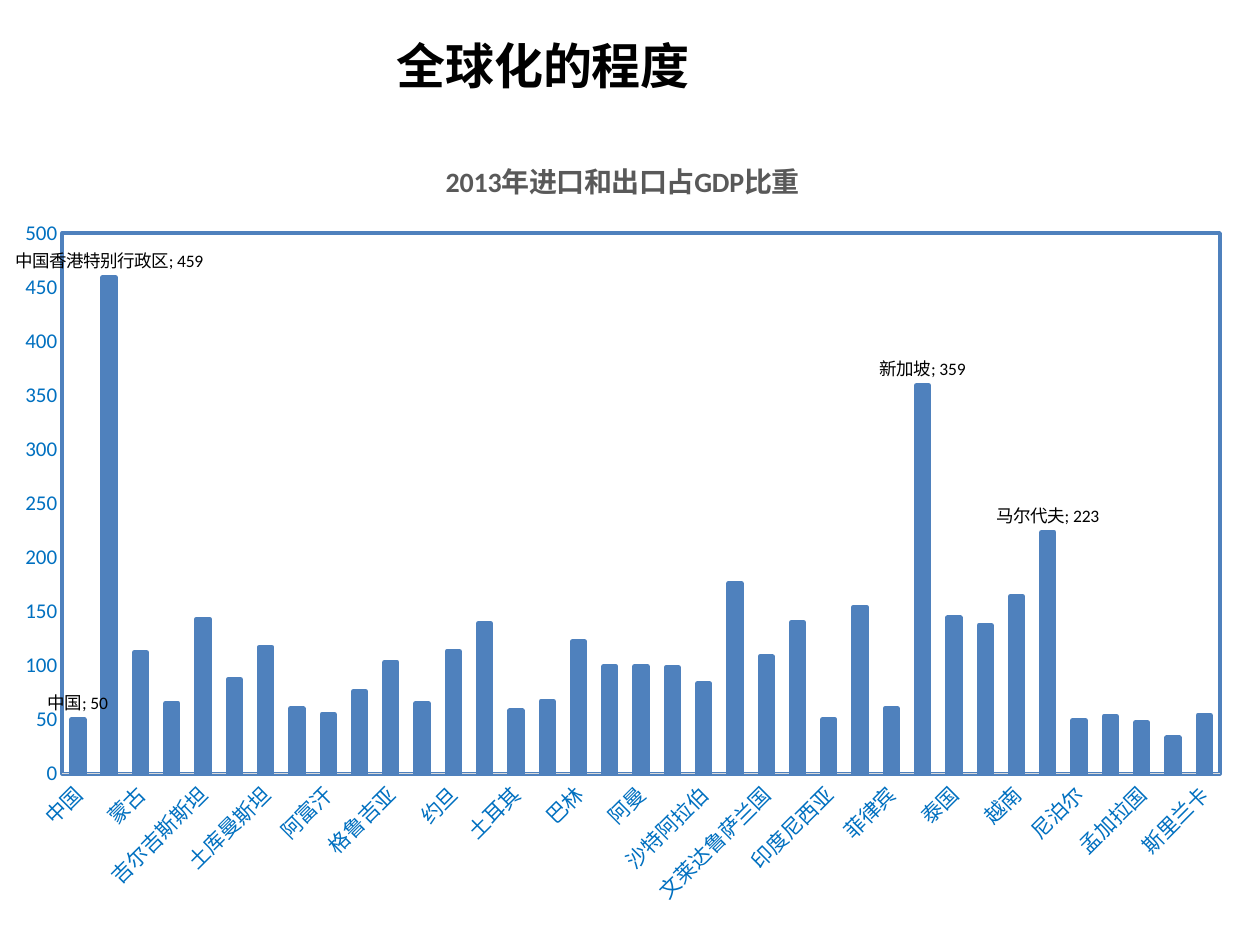
from lxml import etree
from pptx import Presentation
from pptx.chart.data import CategoryChartData
from pptx.dml.color import RGBColor
from pptx.enum import chart as ch, text
from pptx.oxml import parse_xml
from pptx.oxml.ns import nsdecls, qn
from pptx.util import Pt

COLORS = {"ink": "000000", "axis": "0070C0", "bar": "4F81BD",
          "baseline": "D9D9D9", "heading": "595959"}
LATIN, CJK = "Calibri", "Noto Sans CJK SC"

TRADE_SHARE = {
    "中国": 50, "中国香港特别行政区": 459, "蒙古": 112, "哈萨克斯坦": 65,
    "吉尔吉斯斯坦": 143, "塔吉克斯坦": 87, "土库曼斯坦": 117, "乌兹别克斯坦": 60,
    "阿富汗": 55, "阿塞拜疆": 76, "格鲁吉亚": 103, "以色列": 65, "约旦": 113,
    "黎巴嫩": 139, "土耳其": 58, "伊拉克": 67, "巴林": 122, "科威特": 99,
    "阿曼": 99, "卡塔尔": 98, "沙特阿拉伯": 83, "阿拉伯联合酋长国": 176,
    "文莱达鲁萨兰国": 108, "柬埔寨": 140, "印度尼西亚": 50, "马来西亚": 154,
    "菲律宾": 60, "新加坡": 359, "泰国": 144, "东帝汶": 137, "越南": 164,
    "马尔代夫": 223, "尼泊尔": 49, "印度": 53, "孟加拉国": 47,
    "巴基斯坦": 33, "斯里兰卡": 54,
}
LABELLED = ("中国", "中国香港特别行政区", "新加坡", "马尔代夫")


def style_font(font, size, color, bold=False, name=LATIN):
    font.name, font.size, font.bold = name, Pt(size), bold
    font.color.rgb = RGBColor.from_string(COLORS[color])


def set_east_asian(properties):
    for old in properties.findall(qn("a:ea")):
        properties.remove(old)
    east_asian = etree.Element(qn("a:ea"), typeface=CJK)
    properties.find(qn("a:latin")).addnext(east_asian)


def add_heading(slide, left, top, width, height):
    heading = slide.shapes.title
    heading.left, heading.top = Pt(left), Pt(top)
    heading.width, heading.height = Pt(width), Pt(height)
    frame = heading.text_frame
    frame.text = "全球化的程度"
    frame.vertical_anchor = text.MSO_ANCHOR.MIDDLE
    frame.paragraphs[0].alignment = text.PP_ALIGN.CENTER
    run = frame.paragraphs[0].runs[0]
    style_font(run.font, 28, "ink", True, CJK)
    set_east_asian(run.font._element)


def style_plot_area(chart, x, y, w, h):
    plot_area = chart._chartSpace.chart.plotArea
    for old in plot_area.findall(qn("c:layout")):
        plot_area.remove(old)
    plot_area.insert(0, parse_xml(
        f'<c:layout {nsdecls("c")}><c:manualLayout><c:layoutTarget val="inner"/>'
        f'<c:xMode val="edge"/><c:yMode val="edge"/><c:x val="{x}"/><c:y val="{y}"/>'
        f'<c:w val="{w}"/><c:h val="{h}"/></c:manualLayout></c:layout>'))
    plot_area.append(parse_xml(
        f'<c:spPr {nsdecls("c", "a")}><a:noFill/><a:ln w="{Pt(2.25)}"><a:solidFill>'
        f'<a:srgbClr val="{COLORS["bar"]}"/></a:solidFill></a:ln></c:spPr>'))


def style_axes(chart):
    countries, shares = chart.category_axis, chart.value_axis
    for axis in (countries, shares):
        axis.has_major_gridlines = False
        axis.major_tick_mark = axis.minor_tick_mark = ch.XL_TICK_MARK.NONE
        style_font(axis.tick_labels.font, 12, "axis")
    countries.format.line.color.rgb = RGBColor.from_string(COLORS["baseline"])
    countries.format.line.width = Pt(1)
    countries._element.find(qn("c:txPr")).find(qn("a:bodyPr")).set("rot", "-2700000")
    shares.format.line.fill.background()
    shares.minimum_scale, shares.maximum_scale, shares.major_unit = 0, 500, 50


def label_countries(series):
    series.data_labels.show_value = False
    for country in LABELLED:
        label = series.points[list(TRADE_SHARE).index(country)].data_label
        style_font(label.font, 10, "ink")
        label.position = ch.XL_LABEL_POSITION.OUTSIDE_END
    for label in series._element.iter(qn("c:dLbl")):
        label.find(qn("c:showCatName")).set("val", "1")
        etree.SubElement(label, qn("c:separator")).text = "; "


def add_trade_chart(slide, left, top, width, height):
    trade = CategoryChartData()
    trade.categories = list(TRADE_SHARE)
    trade.add_series("Series 1", list(TRADE_SHARE.values()))
    chart = slide.shapes.add_chart(
        ch.XL_CHART_TYPE.COLUMN_CLUSTERED, Pt(left), Pt(top),
        Pt(width), Pt(height), trade).chart
    style_font(chart.font, 10, "ink")
    chart.has_legend = False
    chart.has_title = True
    caption = chart.chart_title.text_frame
    caption.text = "2013年进口和出口占GDP比重"
    style_font(caption.paragraphs[0].runs[0].font, 16, "heading", True)
    chart.chart_title.include_in_layout = False

    plot = chart.plots[0]
    plot.gap_width, plot.vary_by_categories = 150, False
    series = plot.series[0]
    bar_color = RGBColor.from_string(COLORS["bar"])
    series.format.fill.solid()
    series.format.fill.fore_color.rgb = bar_color
    series.format.line.color.rgb = bar_color
    series.format.line.width = Pt(2.75)
    style_axes(chart)
    label_countries(series)
    style_plot_area(chart, x=0.05, y=0.13, w=0.93, h=0.68)


def main():
    deck = Presentation()
    deck.slide_width, deck.slide_height = Pt(720), Pt(540)
    slide = deck.slides.add_slide(deck.slide_layouts[5])
    add_heading(slide, 0, 0, 620.64, 74.16)
    add_trade_chart(slide, 0, 74.16, 711.36, 454.32)
    deck.save("out.pptx")


if __name__ == "__main__":
    main()
